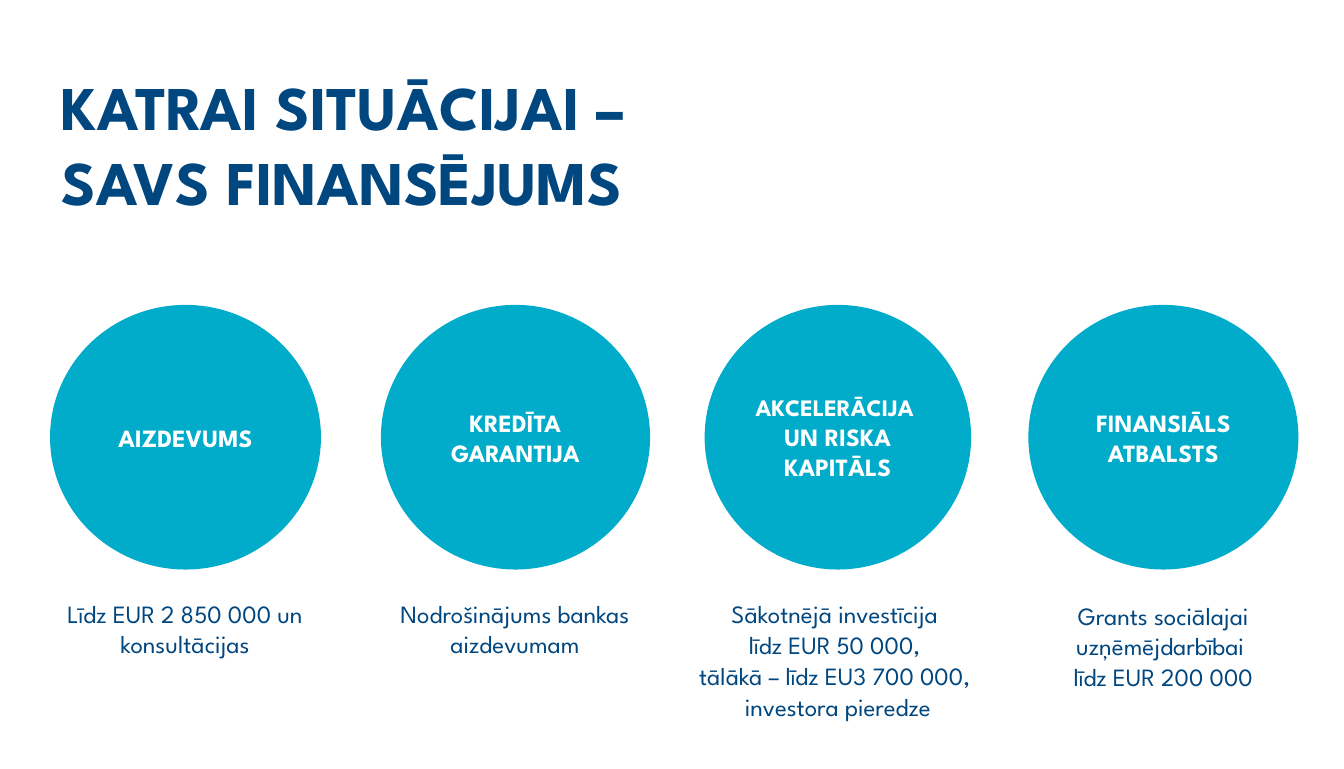
from pptx import Presentation
from pptx.dml.color import RGBColor
from pptx.enum.shapes import MSO_SHAPE as Shape
from pptx.enum.text import MSO_ANCHOR as Anchor, MSO_AUTO_SIZE as AutoSize, PP_ALIGN as Align
from pptx.util import Inches, Pt


def color(value):
    """Turn a hex string into a colour."""
    return RGBColor.from_string(value)


class FundingSlide:
    """Hold the slide and its style, and draw each kind of element."""

    FONT = "League Spartan"
    NAVY = "00467F"
    TEAL = "00ACC9"
    WHITE = "FFFFFF"

    def __init__(self, presentation):
        """Add a blank slide with a white background."""
        self.slide = presentation.slides.add_slide(presentation.slide_layouts[6])
        background = self.slide.background.fill
        background.solid()
        background.fore_color.rgb = color(self.WHITE)

    def add_lines(self, frame, lines, ink, bold=False, align=Align.CENTER, before=0):
        """Add (text, size) lines as paragraphs of one run each."""
        frame.word_wrap = True
        for index, (text, size) in enumerate(lines):
            paragraph = frame.add_paragraph() if index else frame.paragraphs[0]
            paragraph.alignment = align
            if index and before:
                paragraph.space_before = Pt(before)
            run = paragraph.add_run()
            run.text = text
            run.font.name = self.FONT
            run.font.size = Pt(size)
            run.font.bold = bold
            run.font.color.rgb = color(ink)

    def text_box(self, left, top, width, height):
        """Add a text box that grows with its text and return its frame."""
        box = self.slide.shapes.add_textbox(
            Inches(left), Inches(top), Inches(width), Inches(height))
        box.text_frame.auto_size = AutoSize.SHAPE_TO_FIT_TEXT
        return box.text_frame

    def title(self, lines):
        """Add the slide title."""
        frame = self.text_box(0.59, 0.72, 13.59, 1.78)
        self.add_lines(frame, [(line, 50) for line in lines], self.NAVY, True, Align.LEFT)

    def circle(self, left, width, lines):
        """Add a filled circle with a bold label."""
        shape = self.slide.shapes.add_shape(
            Shape.OVAL, Inches(left), Inches(3.41), Inches(width), Inches(2.96))
        shape.shadow.inherit = False
        shape.fill.solid()
        shape.fill.fore_color.rgb = color(self.TEAL)
        shape.line.fill.background()
        shape.text_frame.vertical_anchor = Anchor.MIDDLE
        self.add_lines(shape.text_frame, lines, self.WHITE, True)

    def caption(self, left, top, width, height, lines):
        """Add the centred description below a circle."""
        frame = self.text_box(left, top, width, height)
        frame.margin_left = frame.margin_right = frame.margin_bottom = 0
        frame.margin_top = Inches(0.01)
        self.add_lines(frame, [(line, 20) for line in lines], self.NAVY, before=1)


OFFERS = [
    (0.56, 3.03, [("AIZDEVUMS", 20)],
     (0.64, 6.69, 2.86, 0.69), ["Līdz EUR 2 850 000 un konsultācijas"]),
    (4.26, 3.01, [("KREDĪTA GARANTIJA", 20)],
     (4.33, 6.69, 2.86, 0.69), ["Nodrošinājums bankas aizdevumam"]),
    (7.88, 2.98, [("AKCELERĀCIJA ", 19), ("UN RISKA KAPITĀLS", 20)],
     (7.64, 6.68, 3.46, 1.4),
     ["Sākotnējā investīcija ", "līdz EUR 50 000, ",
      "tālākā – līdz EU3 700 000, ", "investora pieredze"]),
    (11.5, 3.02, [("FINANSIĀLS ATBALSTS", 20)],
     (11.58, 6.71, 2.86, 1.04),
     ["Grants sociālajai uzņēmējdarbībai ", "līdz EUR 200 000"]),
]


def main():
    """Build and save the presentation."""
    presentation = Presentation()
    presentation.slide_width = Inches(15.03)
    presentation.slide_height = Inches(8.6)
    funding = FundingSlide(presentation)
    funding.title(["KATRAI SITUĀCIJAI –", "SAVS FINANSĒJUMS"])
    for left, width, label, place, lines in OFFERS:
        funding.circle(left, width, label)
        funding.caption(*place, lines)
    presentation.save("out.pptx")


if __name__ == "__main__":
    main()
